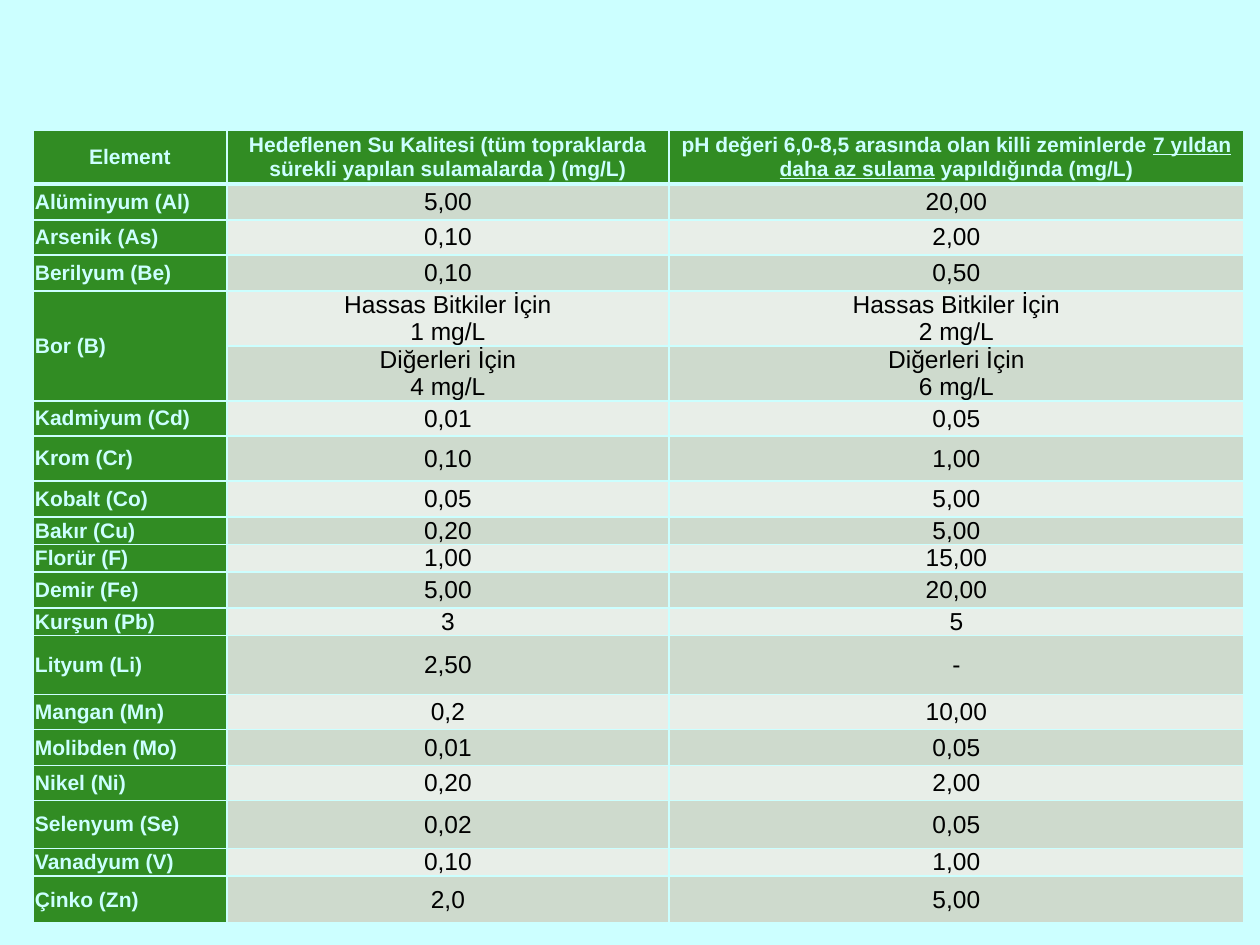
import pptx
import pptx.dml.color
import pptx.enum.text
import pptx.oxml
import pptx.oxml.ns
import pptx.util

PX = 914400 // 126
FONT = "Arial"
AQUA, GREEN, BLACK = "CCFFFF", "318C23", "000000"
BANDS = ["E8EEE8", "CEDACD"]
COLUMN_WIDTHS = [194, 442, 575]
HEADER_HEIGHT = 54
HEADERS = [
    [("Element", False)],
    [("Hedeflenen Su Kalitesi (tüm topraklarda sürekli yapılan sulamalarda ) (mg/L)", False)],
    [
        ("pH değeri 6,0-8,5 arasında olan killi zeminlerde ", False),
        ("7 yıldan daha az sulama", True),
        (" yapıldığında (mg/L)", False),
    ],
]
ELEMENTS = [
    (36, "Alüminyum (Al)", "5,00", "20,00"),
    (35, "Arsenik (As)", "0,10", "2,00"),
    (36, "Berilyum (Be)", "0,10", "0,50"),
    (38, "Bor (B)", "Hassas Bitkiler İçin\n1 mg/L", "Hassas Bitkiler İçin\n2 mg/L"),
    (42, "", "Diğerleri İçin\n4 mg/L", "Diğerleri İçin\n6 mg/L"),
    (35, "Kadmiyum (Cd)", "0,01", "0,05"),
    (45, "Krom (Cr)", "0,10", "1,00"),
    (36, "Kobalt (Co)", "0,05", "5,00"),
    (24, "Bakır (Cu)", "0,20", "5,00"),
    (23, "Florür (F)", "1,00", "15,00"),
    (36, "Demir (Fe)", "5,00", "20,00"),
    (24, "Kurşun (Pb)", "3", "5"),
    (59, "Lityum (Li)", "2,50", "-"),
    (35, "Mangan (Mn)", "0,2", "10,00"),
    (36, "Molibden (Mo)", "0,01", "0,05"),
    (35, "Nikel (Ni)", "0,20", "2,00"),
    (48, "Selenyum (Se)", "0,02", "0,05"),
    (24, "Vanadyum (V)", "0,10", "1,00"),
    (47, "Çinko (Zn)", "2,0", "5,00"),
]


def color(value):
    return pptx.dml.color.RGBColor.from_string(value)


def paint(fill, value):
    fill.solid()
    fill.fore_color.rgb = color(value)


def set_borders(cell, row_index):
    properties = cell._tc.get_or_add_tcPr()
    for position, side in enumerate(["lnL", "lnR", "lnT", "lnB"]):
        under_header = (row_index, side) in [(0, "lnB"), (1, "lnT")]
        width = pptx.util.Pt(3 if under_header else 1)
        line = pptx.oxml.parse_xml(
            f'<a:{side} {pptx.oxml.ns.nsdecls("a")} w="{width}">'
            f'<a:solidFill><a:srgbClr val="{AQUA}"/></a:solidFill></a:{side}>'
        )
        properties.insert(position, line)


def format_cell(cell, row_index, column_index):
    heading = row_index == 0 or column_index == 0
    paint(cell.fill, GREEN if heading else BANDS[row_index % 2])
    set_borders(cell, row_index)
    cell.vertical_anchor = pptx.enum.text.MSO_ANCHOR.MIDDLE
    cell.margin_left = cell.margin_right = 2 * PX
    cell.margin_top = cell.margin_bottom = 0
    left_aligned = column_index == 0 and row_index > 0
    alignment = pptx.enum.text.PP_ALIGN
    for paragraph in cell.text_frame.paragraphs:
        paragraph.alignment = alignment.LEFT if left_aligned else alignment.CENTER
        paragraph.font.name = FONT
        paragraph.font.size = pptx.util.Pt(12 if heading else 14)
        paragraph.font.bold = heading
        paragraph.font.color.rgb = color(AQUA if heading else BLACK)


def add_limits_table(slide, left, top):
    heights = [HEADER_HEIGHT] + [element[0] for element in ELEMENTS]
    frame = slide.shapes.add_table(
        len(heights), len(COLUMN_WIDTHS), left * PX, top * PX,
        sum(COLUMN_WIDTHS) * PX, sum(heights) * PX,
    )
    table = frame.table
    for column, width in zip(table.columns, COLUMN_WIDTHS):
        column.width = width * PX
    for row, height in zip(table.rows, heights):
        row.height = height * PX
    for column_index, pieces in enumerate(HEADERS):
        paragraph = table.cell(0, column_index).text_frame.paragraphs[0]
        for text, underlined in pieces:
            run = paragraph.add_run()
            run.text = text
            if underlined:
                run.font.underline = True
    for row_index, (_, *texts) in enumerate(ELEMENTS, start=1):
        for column_index, text in enumerate(texts):
            table.cell(row_index, column_index).text = text
    for row_index in range(len(heights)):
        for column_index in range(len(COLUMN_WIDTHS)):
            format_cell(table.cell(row_index, column_index), row_index, column_index)
    table.cell(4, 0).merge(table.cell(5, 0))


def main():
    presentation = pptx.Presentation()
    presentation.slide_width = pptx.util.Inches(10)
    presentation.slide_height = pptx.util.Inches(7.5)
    slide = presentation.slides.add_slide(presentation.slide_layouts[6])
    paint(slide.background.fill, AQUA)
    add_limits_table(slide, 33, 130)
    presentation.save("out.pptx")


if __name__ == "__main__":
    main()
